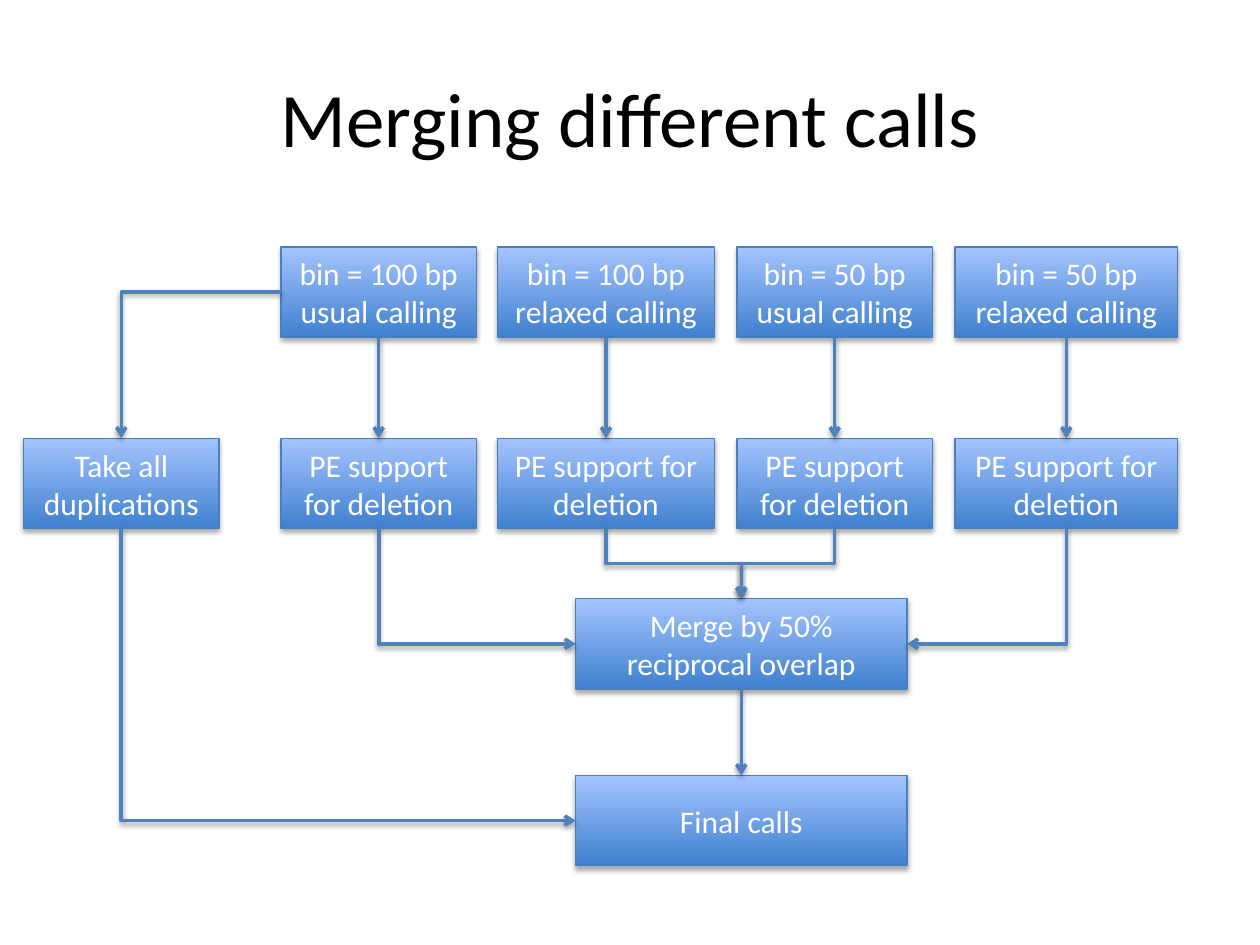
from dataclasses import dataclass

from pptx import Presentation
from pptx.dml.color import RGBColor
from pptx.enum.shapes import MSO_CONNECTOR, MSO_SHAPE
from pptx.enum.text import MSO_ANCHOR, PP_ALIGN
from pptx.oxml import parse_xml
from pptx.oxml.ns import nsdecls, qn
from pptx.util import Pt

TOP, LEFT, BOTTOM, RIGHT = range(4)  # connection sites of a rectangle


@dataclass(frozen=True)
class Theme:
    font: str = "Calibri"
    title_size: float = 44
    box_size: float = 18
    title_color: str = "000000"
    box_text: str = "FFFFFF"
    gradient: tuple = ("3F80CE", "A4C4FF")
    box_line: str = "4B7EBC"
    arrow: str = "4F81BD"
    shadow: str = "000000"


class FlowSlide:
    def __init__(self, slide, theme):
        self.slide = slide
        self.theme = theme

    def label(self, shape, text, size, color):
        frame = shape.text_frame
        frame.word_wrap = True
        frame.vertical_anchor = MSO_ANCHOR.MIDDLE
        frame.text = text
        for paragraph in frame.paragraphs:
            paragraph.alignment = PP_ALIGN.CENTER
            for run in paragraph.runs:
                run.font.name = self.theme.font
                run.font.size = Pt(size)
                run.font.color.rgb = RGBColor.from_string(color)

    def add_shadow(self, properties, distance, opacity):
        properties.append(parse_xml(
            f'<a:effectLst {nsdecls("a")}>'
            f'<a:outerShdw blurRad="{Pt(3.1)}" dist="{Pt(distance)}" dir="5400000" rotWithShape="0">'
            f'<a:srgbClr val="{self.theme.shadow}"><a:alpha val="{opacity * 1000}"/></a:srgbClr>'
            '</a:outerShdw></a:effectLst>'))

    def title(self, text, left, top, width, height):
        shape = self.slide.shapes.add_textbox(Pt(left), Pt(top), Pt(width), Pt(height))
        self.label(shape, text, self.theme.title_size, self.theme.title_color)

    def box(self, text, left, top, width, height=51.8):
        shape = self.slide.shapes.add_shape(
            MSO_SHAPE.RECTANGLE, Pt(left), Pt(top), Pt(width), Pt(height))
        shape.fill.gradient()
        shape.fill.gradient_angle = 90
        for stop, color in zip(shape.fill.gradient_stops, self.theme.gradient):
            stop.color.rgb = RGBColor.from_string(color)
        shape.line.color.rgb = RGBColor.from_string(self.theme.box_line)
        shape.line.width = Pt(0.75)
        self.add_shadow(shape.element.spPr, 1.8, 35)
        self.label(shape, text, self.theme.box_size, self.theme.box_text)
        return shape

    def arrow(self, source, start, target, end, kind=MSO_CONNECTOR.STRAIGHT):
        connector = self.slide.shapes.add_connector(kind, 0, 0, 0, 0)
        connector.begin_connect(source, start)
        connector.end_connect(target, end)
        connector.line.color.rgb = RGBColor.from_string(self.theme.arrow)
        connector.line.width = Pt(2)
        properties = connector.element.spPr
        properties.find(qn("a:ln")).append(
            parse_xml(f'<a:tailEnd {nsdecls("a")} type="arrow"/>'))
        self.add_shadow(properties, 1.6, 38)
        return connector

    def elbow(self, source, start, target, end):
        """Bent arrow that goes down, or left when it starts on the left side."""
        connector = self.arrow(source, start, target, end, MSO_CONNECTOR.ELBOW)
        across = connector.end_x - connector.begin_x
        down = connector.end_y - connector.begin_y
        center_x = (connector.begin_x + connector.end_x) // 2
        center_y = (connector.begin_y + connector.end_y) // 2
        width, height = abs(across), abs(down)
        if start == LEFT:
            rotation, flip_h, flip_v = 180, 0, 1
        else:
            width, height = height, width
            rotation, flip_h, flip_v = (270, 1, 0) if across > 0 else (90, 0, 0)
        connector.left, connector.top = center_x - width // 2, center_y - height // 2
        connector.width, connector.height = width, height
        connector.rotation = rotation
        properties = connector.element.spPr
        frame = properties.find(qn("a:xfrm"))
        frame.set("flipH", str(flip_h))
        frame.set("flipV", str(flip_v))
        # One corner when the two ends are perpendicular, two when parallel
        corners = 2 if start % 2 == end % 2 else 1
        properties.find(qn("a:prstGeom")).set("prst", f"bentConnector{corners + 1}")


def main():
    presentation = Presentation()
    presentation.slide_width, presentation.slide_height = Pt(720), Pt(540)
    slide = presentation.slides.add_slide(presentation.slide_layouts[6])
    flow = FlowSlide(slide, Theme())
    flow.title("Merging different calls", 36, 21.6, 648, 90)

    # Calling runs and the support check below each
    columns = [
        ("bin = 100 bp\nusual calling", 160.6, 111.6),
        ("bin = 100 bp\nrelaxed calling", 284.4, 123.8),
        ("bin = 50 bp\nusual calling", 421.2, 111.6),
        ("bin = 50 bp\nrelaxed calling", 545.8, 127.1),
    ]
    calls = [flow.box(text, left, 141.1, width) for text, left, width in columns]
    checks = [flow.box("PE support for deletion", left, 250.4, width)
              for _, left, width in columns]

    # Duplications, merge and result
    duplications = flow.box("Take all duplications", 13.5, 250.4, 111.6)
    merge = flow.box("Merge by 50% reciprocal overlap", 328.9, 342, 189.4)
    final = flow.box("Final calls", 328.9, 443, 189.4)

    # Straight arrows
    for source, target in [*zip(calls, checks), (merge, final)]:
        flow.arrow(source, BOTTOM, target, TOP)

    # Bent arrows
    flow.elbow(calls[0], LEFT, duplications, TOP)
    flow.elbow(duplications, BOTTOM, final, LEFT)
    for check, side in zip(checks, (LEFT, TOP, TOP, RIGHT)):
        flow.elbow(check, BOTTOM, merge, side)

    presentation.save("out.pptx")


if __name__ == "__main__":
    main()
